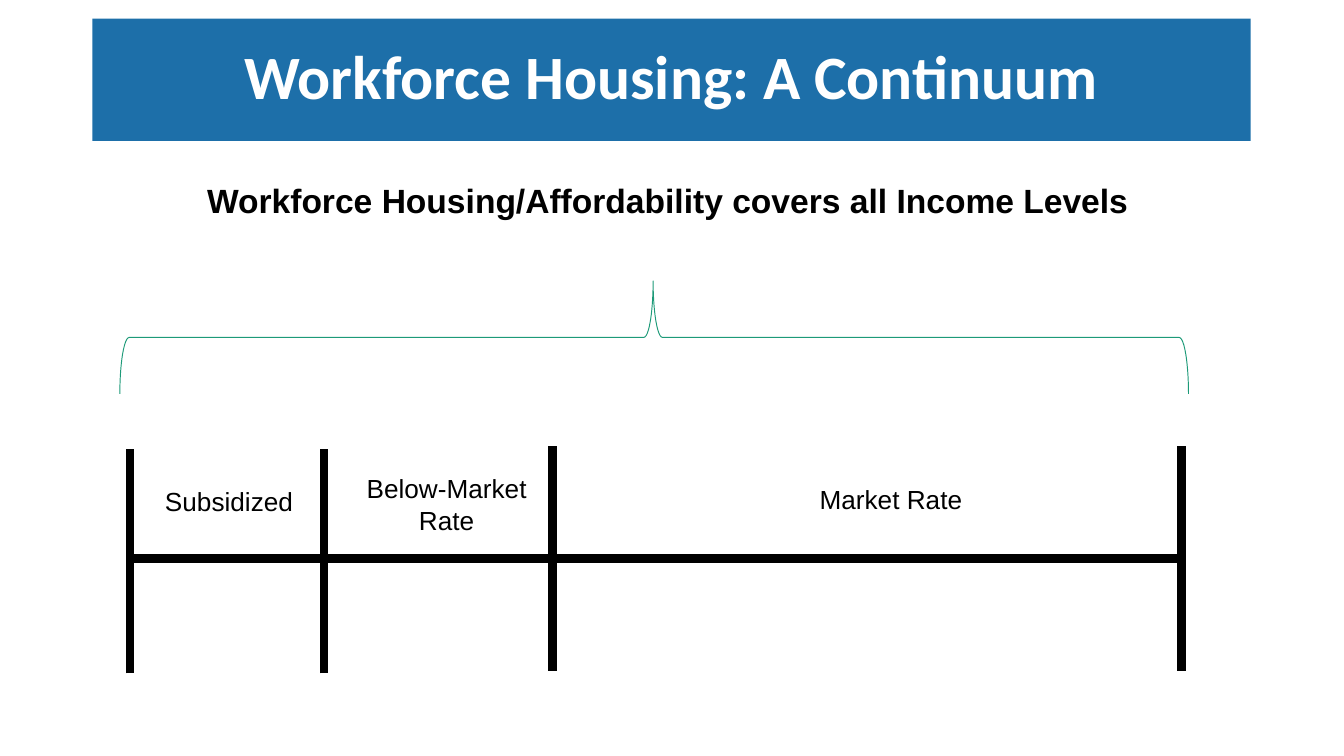
import pptx
import pptx.util
import pptx.dml.color
import pptx.enum.shapes
import pptx.enum.text
import pptx.oxml

Pt = pptx.util.Pt
RGB = pptx.dml.color.RGBColor
BLUE = RGB(0x1D, 0x6F, 0xA9)
GREEN = RGB(0x1D, 0x9A, 0x78)
BLACK = RGB(0, 0, 0)
WHITE = RGB(255, 255, 255)
EFFECT = '<a:effectLst xmlns:a="http://schemas.openxmlformats.org/drawingml/2006/main"/>'


class Deck:
    label = {"name": "Arial", "size": Pt(14), "bold": False}
    lead = {"name": "Arial", "size": Pt(18), "bold": True}
    head = {"name": "Calibri", "size": Pt(33), "bold": True}

    def __init__(self):
        self.show = pptx.Presentation()
        self.show.slide_width = Pt(720)
        self.show.slide_height = Pt(405)
        self.slide = self.show.slides.add_slide(self.show.slide_layouts[5])

    def fill_text(self, shape, text, style, color):
        frame = shape.text_frame
        frame.word_wrap = True
        frame.text = text
        para = frame.paragraphs[0]
        para.alignment = pptx.enum.text.PP_ALIGN.CENTER
        font = para.runs[0].font
        for key, value in style.items():
            setattr(font, key, value)
        font.color.rgb = color
        return frame

    def title(self, text, left, top, width, height):
        shape = self.slide.shapes.title
        place = {"left": left, "top": top, "width": width, "height": height}
        for key, value in place.items():
            setattr(shape, key, Pt(value))
        shape.fill.solid()
        shape.fill.fore_color.rgb = BLUE
        frame = self.fill_text(shape, text, self.head, WHITE)
        frame.auto_size = pptx.enum.text.MSO_AUTO_SIZE.NONE
        frame.vertical_anchor = pptx.enum.text.MSO_ANCHOR.MIDDLE
        frame.paragraphs[0].line_spacing = 0.9

    def text(self, text, style, *area):
        box = self.slide.shapes.add_textbox(*map(Pt, area))
        frame = self.fill_text(box, text, style, BLACK)
        frame.auto_size = pptx.enum.text.MSO_AUTO_SIZE.SHAPE_TO_FIT_TEXT

    def line(self, *ends):
        kind = pptx.enum.shapes.MSO_CONNECTOR.STRAIGHT
        line = self.slide.shapes.add_connector(kind, *map(Pt, ends))
        line.line.color.rgb = BLACK
        line.line.width = Pt(4.5)
        line._element.spPr.append(pptx.oxml.parse_xml(EFFECT))

    def brace(self, *area):
        kind = pptx.enum.shapes.MSO_SHAPE.RIGHT_BRACE
        brace = self.slide.shapes.add_shape(kind, *map(Pt, area))
        brace.rotation = 270
        brace.adjustments[0] = 0.083
        brace.adjustments[1] = 0.499
        brace.shadow.inherit = False
        brace.fill.background()
        brace.line.color.rgb = GREEN
        brace.line.width = Pt(0.5)


def main():
    deck = Deck()
    deck.title("Workforce Housing: A Continuum", 49.5, 10, 620.5, 65.5)
    deck.line(68.5, 299.3, 633, 299.3)
    for x, top in ((69.8, 240.5), (633, 239), (173.7, 240.5), (296, 239)):
        deck.line(x, top + 120.3, x, top)
    bands = (
        ("Subsidized", 78.5, 256.3, 88.5, 24.5),
        ("Below-Market Rate", 189.3, 249.8, 100, 41),
        ("Market Rate", 411.8, 255.6, 131, 24.5),
    )
    for name, *area in bands:
        deck.text(name, deck.label, *area)
    deck.brace(320.2, -105.5, 60.5, 572.5)
    deck.text("Workforce Housing/Affordability covers all Income Levels",
              deck.lead, 78.5, 93, 558.7, 29)
    deck.show.save("out.pptx")


if __name__ == "__main__":
    main()
